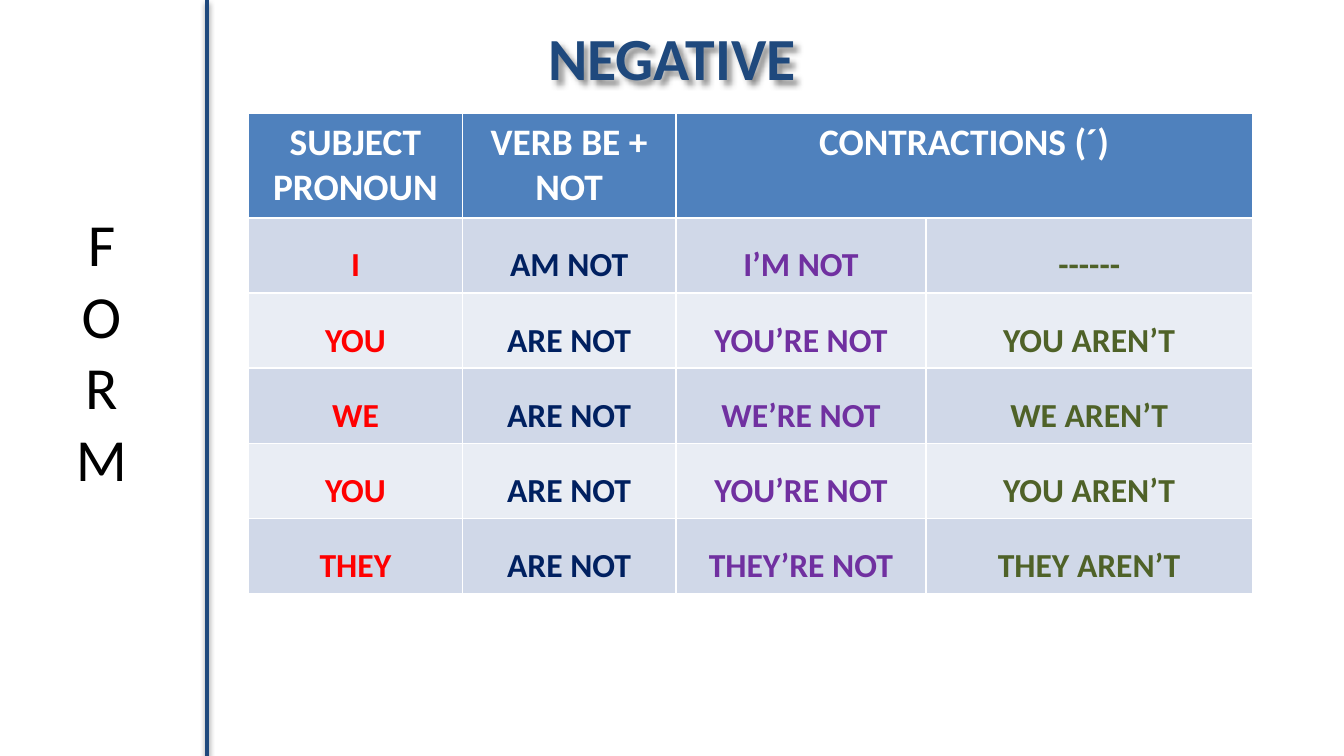
from lxml import etree
from pptx import Presentation
from pptx.dml.color import RGBColor
from pptx.enum.shapes import MSO_CONNECTOR
from pptx.enum.text import MSO_ANCHOR, PP_ALIGN
from pptx.oxml.ns import qn
from pptx.util import Inches, Pt

STRAIGHT = MSO_CONNECTOR.STRAIGHT
MIDDLE = MSO_ANCHOR.MIDDLE
CENTER = PP_ALIGN.CENTER
TITLE_ONLY = 5

PAGE_WIDTH = 10
PAGE_HEIGHT = PAGE_WIDTH * 9 / 16
FONT = "Calibri"
NAVY = "1F497D"
HEADER_FILL = "4F81BD"
BAND_FILLS = ["D0D8E8", "E9EDF4"]
COLUMN_COLORS = ["FF0000", "002060", "7030A0", "4F6228"]
COLUMN_WIDTHS = [1.59, 1.59, 1.86, 2.43]
HEADER_HEIGHT, ROW_HEIGHT = 0.78, 0.56

HEADERS = ["SUBJECT PRONOUN", "VERB BE + NOT", "CONTRACTIONS (´)"]
FORMS = [
    ["I", "AM NOT", "I’M NOT", "------"],
    ["YOU", "ARE NOT", "YOU’RE NOT", "YOU AREN’T"],
    ["WE", "ARE NOT", "WE’RE NOT", "WE AREN’T"],
    ["YOU", "ARE NOT", "YOU’RE NOT", "YOU AREN’T"],
    ["THEY", "ARE NOT", "THEY’RE NOT", "THEY AREN’T"],
]


def rgb(color):
    return RGBColor.from_string(color)


def write(frame, text, size, color, bold=False):
    """Put one centred line of formatted text in a frame and return its paragraph."""
    frame.text = text
    para = frame.paragraphs[0]
    para.alignment = CENTER
    font = para.runs[0].font
    font.name = FONT
    font.size = Pt(size)
    font.bold = bold
    font.color.rgb = rgb(color)
    return para


def add_shadow(shape, blur, distance, angle, opacity):
    """Give a shape a black outer shadow (points, degrees, percent)."""
    effects = etree.SubElement(shape._element.spPr, qn("a:effectLst"))
    shadow = etree.SubElement(
        effects, qn("a:outerShdw"), blurRad=str(Pt(blur)), dist=str(Pt(distance)),
        dir=str(angle * 60000), algn="tl", rotWithShape="0")
    black = etree.SubElement(shadow, qn("a:srgbClr"), val="000000")
    etree.SubElement(black, qn("a:alpha"), val=str(opacity * 1000))


def add_title(page):
    title = page.shapes.title
    title.left, title.top = Inches(0), Inches(0)
    title.width, title.height = Inches(PAGE_WIDTH), Inches(0.84)
    title.fill.background()
    add_shadow(title, 3, 3, 45, 43)
    title.text_frame.vertical_anchor = MIDDLE
    write(title.text_frame, "NEGATIVE", 32, NAVY, bold=True)


def add_side_label(page):
    """Add a label in a box so narrow that each letter wraps to its own line."""
    box = page.shapes.add_textbox(Inches(0.44), Inches(1.71), Inches(0.63), Inches(1.79))
    frame = box.text_frame
    frame.word_wrap = True
    frame.vertical_anchor = MIDDLE
    write(frame, "FORM", 32, "000000")


def add_divider(page):
    divider = page.shapes.add_connector(
        STRAIGHT, Inches(1.54), Inches(0), Inches(1.54), Inches(PAGE_HEIGHT))
    divider.line.color.rgb = rgb(NAVY)
    divider.line.width = Pt(2)
    add_shadow(divider, 3.1, 1.6, 90, 38)


def fill_cell(cell, color):
    cell.fill.solid()
    cell.fill.fore_color.rgb = rgb(color)


def add_forms_table(page):
    height = HEADER_HEIGHT + ROW_HEIGHT * len(FORMS)
    table = page.shapes.add_table(
        len(FORMS) + 1, len(COLUMN_WIDTHS), Inches(1.85), Inches(0.84),
        Inches(sum(COLUMN_WIDTHS)), Inches(height)).table
    for column, width in zip(table.columns, COLUMN_WIDTHS):
        column.width = Inches(width)
    for index, row in enumerate(table.rows):
        row.height = Inches(ROW_HEIGHT if index else HEADER_HEIGHT)

    table.cell(0, 2).merge(table.cell(0, 3))
    for column, header in enumerate(HEADERS):
        cell = table.cell(0, column)
        fill_cell(cell, HEADER_FILL)
        write(cell.text_frame, header, 20, "FFFFFF", bold=True)

    for row, forms in enumerate(FORMS, start=1):
        for column, (form, color) in enumerate(zip(forms, COLUMN_COLORS)):
            cell = table.cell(row, column)
            fill_cell(cell, BAND_FILLS[(row - 1) % 2])
            para = write(cell.text_frame, form, 18, color, bold=True)
            para.line_spacing = 1.5


def main():
    deck = Presentation()
    deck.slide_width, deck.slide_height = Inches(PAGE_WIDTH), Inches(PAGE_HEIGHT)
    page = deck.slides.add_slide(deck.slide_layouts[TITLE_ONLY])
    add_side_label(page)
    add_forms_table(page)
    add_divider(page)
    add_title(page)
    deck.save("out.pptx")


if __name__ == "__main__":
    main()
